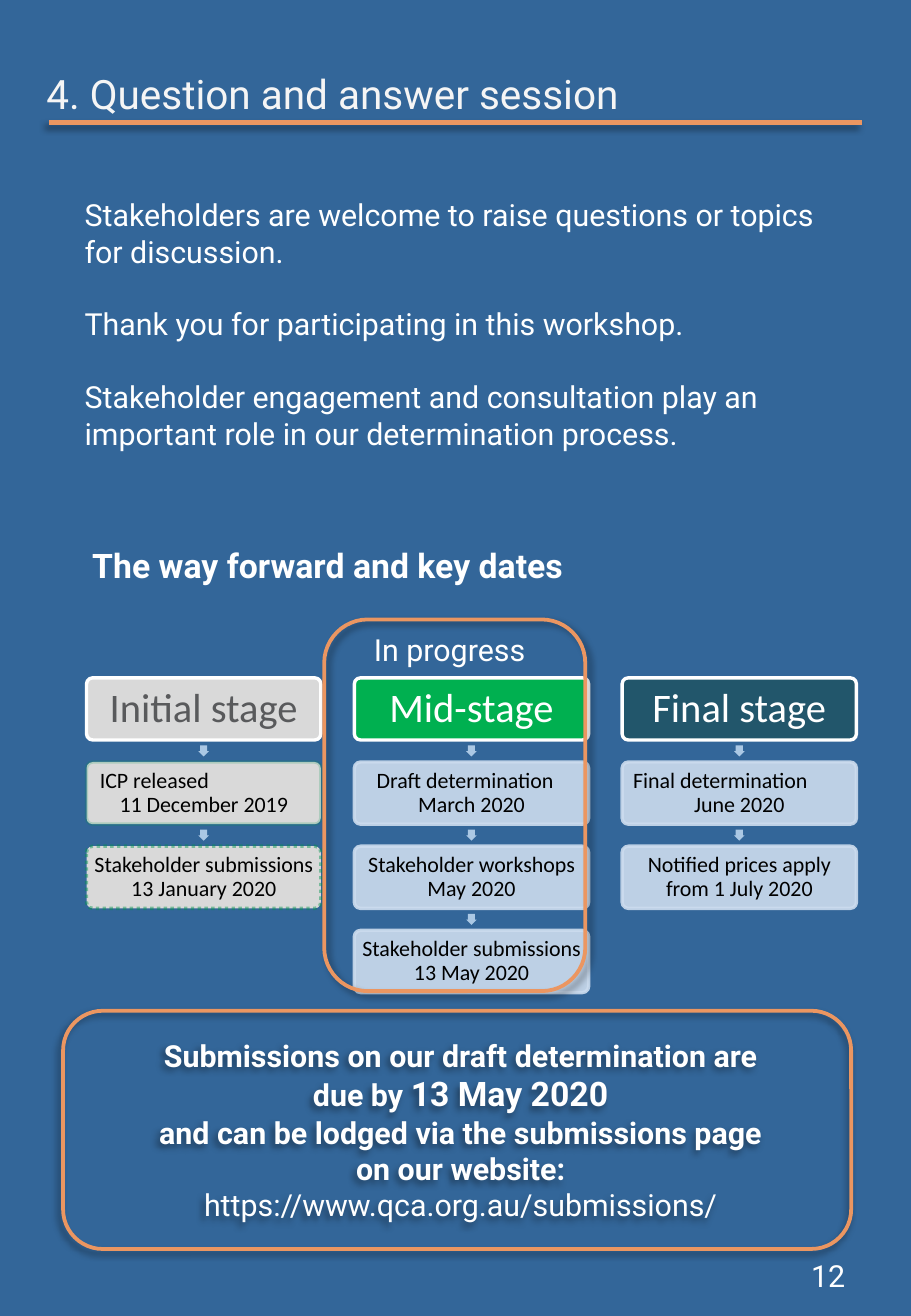
from lxml import etree
from pptx import Presentation
from pptx.dml.color import RGBColor
from pptx.enum import dml, shapes, text
from pptx.oxml.ns import qn
from pptx.util import Cm, Pt

TITLE = "4. Question and answer session"
MESSAGES = [
    "Stakeholders are welcome to raise questions or topics for discussion.",
    "Thank you for participating in this workshop.",
    "Stakeholder engagement and consultation play an important role in our determination process.",
]
HEADING = "The way forward and key dates"
STATUS = "In progress"
PAGE_NUMBER = "12"

# Each callout line: spans of (wording, size, bold)
CALLOUT = [
    [("Submissions on our draft determination are due by ", 18, True), ("13 May 2020", 20, True)],
    [("and can be lodged via the submissions page on our website:", 18, True)],
    [("https://www.qca.org.au/submissions/", 18, False)],
]

WHITE, ORANGE, BLUE, PALE, GREY = "FFFFFF", "EB9661", "336699", "CCDCEE", "D9D9D9"

# Card styles: fill, fill opacity, line, line opacity, dash
OPEN = (PALE, 90, PALE, 90, None)
DONE = (GREY, 100, "00944D", 20, None)
DONE_DOTTED = (GREY, 100, "00944D", 44, dml.MSO_LINE.ROUND_DOT)

# Each stage: name, fill, font colour, cards of (what, when, indent or None, style)
STAGES = [
    ("Initial stage", GREY, "595A5C", [
        ("ICP released", "11 December 2019", 0.18, DONE),
        ("Stakeholder submissions", "13 January 2020", None, DONE_DOTTED),
    ]),
    ("Mid-stage", "00B050", WHITE, [
        ("Draft determination", "March 2020", 0.37, OPEN),
        ("Stakeholder workshops", "May 2020", None, OPEN),
        ("Stakeholder submissions", "13 May 2020", None, OPEN),
    ]),
    ("Final stage", "22566B", WHITE, [
        ("Final determination", "June 2020", 0.13, OPEN),
        ("Notified prices apply", "from 1 July 2020", None, OPEN),
    ]),
]
CARD_LEFT, CARD_TOP, CARD_WIDTH, CARD_HEIGHT = 1.81, 14.17, 4.9, 1.3
COLUMN_STEP, ROW_STEP = 5.6, 1.76
ARROW_WIDTH, ARROW_HEIGHT = 0.22, 0.23

deck = Presentation()
deck.slide_width, deck.slide_height = Cm(19.05), Cm(27.51)
page = deck.slides.add_slide(deck.slide_layouts[6])


def paint(target, colour, opacity=100):
    """Colour a fill, font or line, with opacity in percent."""
    if hasattr(target, "solid"):
        target.solid()
        target = target.fore_color
    else:
        target = target.color
    target.rgb = RGBColor.from_string(colour)
    if opacity < 100:
        for node in target._xFill.iter(qn("a:srgbClr")):
            etree.SubElement(node, qn("a:alpha"), val=str(opacity * 1000))


def cast_shadow(shape, angle):
    properties = shape._element.spPr
    effects = properties.find(qn("a:effectLst"))
    if effects is None:
        effects = etree.SubElement(properties, qn("a:effectLst"))
    shadow = etree.SubElement(effects, qn("a:outerShdw"), blurRad=str(Pt(4)),
                              dist=str(Pt(3)), dir=str(angle * 60000), rotWithShape="0")
    black = etree.SubElement(shadow, qn("a:srgbClr"), val="000000")
    etree.SubElement(black, qn("a:alpha"), val="40000")


def add_box(kind, left, top, width, height, fill=None, line=None, weight=2.0,
            fill_opacity=100, line_opacity=100, adjust=()):
    box = page.shapes.add_shape(kind, Cm(left), Cm(top), Cm(width), Cm(height))
    box.shadow.inherit = False
    for index, value in enumerate(adjust):
        box.adjustments[index] = value
    if fill:
        paint(box.fill, fill, fill_opacity)
    else:
        box.fill.background()
    if line:
        paint(box.line.fill, line, line_opacity)
        box.line.width = Pt(weight)
    else:
        box.line.fill.background()
    return box


def set_margins(frame, left, top, right, bottom):
    frame.margin_left, frame.margin_top = Cm(left), Cm(top)
    frame.margin_right, frame.margin_bottom = Cm(right), Cm(bottom)


def write(frame, lines, size, colour=WHITE, font="Roboto", bold=False, align=None,
          before=0, spacing=None):
    """Fill a text frame with one paragraph per line."""
    frame.word_wrap = True
    for index, line in enumerate(lines):
        para = frame.add_paragraph() if index else frame.paragraphs[0]
        para.text = line
        para.alignment = align
        para.line_spacing = spacing
        if index and before:
            para.space_before = Pt(before)
        para.font.name, para.font.size, para.font.bold = font, Pt(size), bold
        paint(para.font, colour) if not hasattr(para.font, "fill") else paint(para.font.fill, colour)


def add_label(left, top, width, height, lines, size, margins=None, **style):
    box = page.shapes.add_textbox(Cm(left), Cm(top), Cm(width), Cm(height))
    if margins is not None:
        set_margins(box.text_frame, *[margins] * 4)
    write(box.text_frame, lines, size, **style)
    return box


def add_card(left, top, lines, size, colour, fill, line, fill_opacity=100, line_opacity=100):
    card = add_box(shapes.MSO_SHAPE.ROUNDED_RECTANGLE, left, top, CARD_WIDTH, CARD_HEIGHT,
                   fill, line, 2, fill_opacity, line_opacity, [0.1])
    set_margins(card.text_frame, *[0.06] * 4)
    card.text_frame.vertical_anchor = text.MSO_ANCHOR.MIDDLE
    write(card.text_frame, lines, size, colour, "Calibri", align=text.PP_ALIGN.CENTER, spacing=0.9)
    return card


def add_stages():
    for column, (name, fill, colour, cards) in enumerate(STAGES):
        left = CARD_LEFT + column * COLUMN_STEP
        add_card(left, CARD_TOP, [name], 24, colour, fill, WHITE)
        for row, (what, when, indent, style) in enumerate(cards, 1):
            top = CARD_TOP + row * ROW_STEP
            gap = ROW_STEP - CARD_HEIGHT
            add_box(shapes.MSO_SHAPE.DOWN_ARROW, left + (CARD_WIDTH - ARROW_WIDTH) / 2,
                    top - (gap + ARROW_HEIGHT) / 2, ARROW_WIDTH, ARROW_HEIGHT, "ABC8E4",
                    adjust=[0.67, 0.5])
            fill, fill_opacity, line, line_opacity, dash = style
            card = add_card(left, top, [what, when], 13, "000000", fill, line,
                            fill_opacity, line_opacity)
            if dash:
                card.line.dash_style = dash
            if indent:
                para = card.text_frame.paragraphs[0]
                para.alignment = text.PP_ALIGN.LEFT
                para._p.get_or_add_pPr().set("marL", str(Cm(indent)))


def add_callout():
    callout = add_box(shapes.MSO_SHAPE.ROUNDED_RECTANGLE, 1.32, 21.13, 16.48, 4.98,
                      line=ORANGE, weight=2.25)
    cast_shadow(callout, 135)
    frame = callout.text_frame
    frame.vertical_anchor = text.MSO_ANCHOR.MIDDLE
    set_margins(frame, 1.75, 0.1, 1.6, 0.1)
    write(frame, [""] * len(CALLOUT), 18, align=text.PP_ALIGN.CENTER)
    for para, spans in zip(frame.paragraphs, CALLOUT):
        for wording, size, bold in spans:
            span = para.add_run()
            span.text = wording
            span.font.name, span.font.size, span.font.bold = "Roboto", Pt(size), bold
            paint(span.font.fill, WHITE)


def main():
    paint(page.background.fill, BLUE)
    rule = page.shapes.add_connector(shapes.MSO_CONNECTOR.STRAIGHT,
                                     Cm(1.02), Cm(2.57), Cm(18.03), Cm(2.57))
    paint(rule.line.fill, ORANGE)
    rule.line.width = Pt(3)
    cast_shadow(rule, 135)
    title = add_label(0.97, 1.35, 17.6, 1.19, [TITLE], 24, margins=0, colour="F5F5F5")
    title.text_frame.vertical_anchor = text.MSO_ANCHOR.MIDDLE
    add_label(1.52, 3.98, 16.08, 5.62, MESSAGES, 18, before=21.5)
    add_label(1.93, 11.38, 11.81, 1.09, [HEADING], 20, margins=0, bold=True)
    add_stages()
    panel = add_box(shapes.MSO_SHAPE.ROUNDED_RECTANGLE, 6.78, 12.95, 5.46, 7.77,
                    line=ORANGE, weight=2.25)
    cast_shadow(panel, 45)
    add_label(7.57, 13.06, 3.94, 1.12, [STATUS], 18)
    add_callout()
    add_label(16.71, 26.16, 1.37, 1.03, [PAGE_NUMBER], 18)
    deck.save("out.pptx")


if __name__ == "__main__":
    main()
